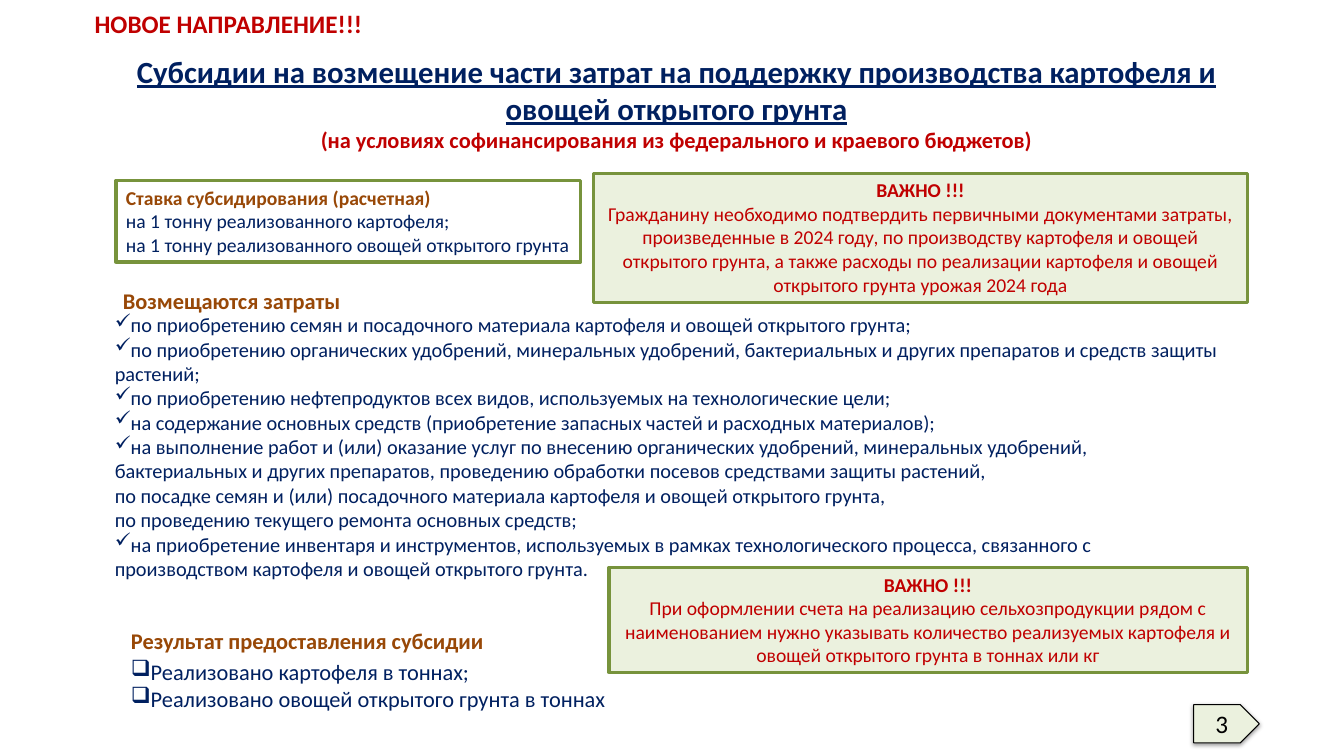
from lxml.etree import SubElement
from pptx import Presentation
from pptx.dml.color import RGBColor
from pptx.enum.shapes import MSO_SHAPE as Shape
from pptx.enum.text import MSO_ANCHOR as Anchor, MSO_AUTO_SIZE as AutoSize, PP_ALIGN as Align
from pptx.oxml.ns import qn
from pptx.util import Inches, Pt

NAVY = RGBColor(0x00, 0x20, 0x60)
RED = RGBColor(0xC0, 0x00, 0x00)
BROWN = RGBColor(0x98, 0x48, 0x07)
GREEN = RGBColor(0x77, 0x93, 0x3C)
PALE_GREEN = RGBColor(0xEB, 0xF1, 0xDE)
BLACK = RGBColor(0x00, 0x00, 0x00)

WIDTH, HEIGHT = Inches(13.33), Inches(7.5)

SUBSIDY = "Субсидии на возмещение части затрат на поддержку производства картофеля и овощей открытого грунта"
FUNDING = "(на условиях софинансирования из федерального и краевого бюджетов)"
RATES = ["на 1 тонну реализованного картофеля;", "на 1 тонну реализованного овощей открытого грунта"]
PROOF = ("Гражданину необходимо подтвердить первичными документами затраты, произведенные в 2024 году, "
         "по производству картофеля и овощей открытого грунта, а также расходы по реализации "
         "картофеля и овощей открытого грунта урожая 2024 года")
INVOICE = ("При оформлении счета на реализацию сельхозпродукции рядом с наименованием нужно указывать "
           "количество реализуемых картофеля и овощей открытого грунта в тоннах или кг")
COSTS = [
    "по приобретению семян и посадочного материала картофеля и овощей открытого грунта;",
    "по приобретению органических удобрений, минеральных удобрений, бактериальных и других "
    "препаратов и средств защиты растений;",
    "по приобретению нефтепродуктов всех видов, используемых на технологические цели;",
    "на содержание основных средств (приобретение запасных частей и расходных материалов);",
    "на выполнение работ и (или) оказание услуг по внесению органических удобрений, минеральных "
    "удобрений, бактериальных и других препаратов, проведению обработки посевов средствами защиты "
    "растений,\nпо посадке семян и (или) посадочного материала картофеля и овощей открытого грунта,\n"
    "по проведению текущего ремонта основных средств;",
    "на приобретение инвентаря и инструментов, используемых в рамках технологического процесса, "
    "связанного с производством картофеля и овощей открытого грунта.",
]
RESULTS = ["Реализовано картофеля в тоннах;", "Реализовано овощей открытого грунта в тоннах"]


def place(left, top, width, height):
    """Turn percent of the slide into lengths."""
    return [int(side * share / 100)
            for side, share in zip((WIDTH, HEIGHT) * 2, (left, top, width, height))]


def line(text, size, color, **look):
    """Describe one paragraph: its text and its font values."""
    return text, {"name": "Calibri", "size": Pt(size), "bold": False, **look}, color


def write(frame, lines, align=Align.LEFT, bullet=None):
    for number, (text, look, color) in enumerate(lines):
        paragraph = frame.add_paragraph() if number else frame.paragraphs[0]
        paragraph.text = text
        paragraph.alignment = align
        if bullet:
            SubElement(paragraph._p.get_or_add_pPr(), qn("a:buChar"), char=bullet)
        for run in paragraph.runs:
            for attribute, value in look.items():
                setattr(run.font, attribute, value)
            run.font.color.rgb = color
        for line_break in paragraph._p.findall(qn("a:br")):
            SubElement(line_break, qn("a:rPr"), sz=str(look["size"].centipoints))


def add_text(slide, area, lines, wrap=True, **layout):
    frame = slide.shapes.add_textbox(*place(*area)).text_frame
    frame.word_wrap = wrap
    frame.auto_size = AutoSize.SHAPE_TO_FIT_TEXT
    write(frame, lines, **layout)


def add_panel(slide, area, lines, fill=None, align=Align.LEFT, kind=Shape.RECTANGLE,
              border=GREEN, weight=2.25, anchor=Anchor.TOP):
    panel = slide.shapes.add_shape(kind, *place(*area))
    panel.shadow.inherit = False
    if fill:
        panel.fill.solid()
        panel.fill.fore_color.rgb = fill
    else:
        panel.fill.background()
    panel.line.color.rgb = border
    panel.line.width = Pt(weight)
    panel.text_frame.word_wrap = True
    panel.text_frame.vertical_anchor = anchor
    write(panel.text_frame, lines, align)
    return panel


def add_warning(slide, area, message):
    add_panel(slide, area, [line("ВАЖНО !!!", 14, RED, bold=True), line(message, 14, RED)],
              PALE_GREEN, Align.CENTER)


def add_heading(slide, area, text):
    add_text(slide, area, [line(text, 16, BROWN, bold=True)], wrap=False)


def add_page_marker(slide, area, number):
    marker = add_panel(slide, area, [line(number, 18, BLACK)], PALE_GREEN, Align.CENTER,
                       Shape.PENTAGON, BLACK, 0.75, Anchor.MIDDLE)
    # Soft shadow straight below
    effects = marker._element.spPr.find(qn("a:effectLst"))
    shadow = SubElement(effects, qn("a:outerShdw"), blurRad=str(Pt(3.1)), dist=str(Pt(1.6)),
                        dir="5400000", rotWithShape="0")
    tint = SubElement(shadow, qn("a:srgbClr"), val=str(BLACK))
    SubElement(tint, qn("a:alpha"), val="38000")


def main():
    deck = Presentation()
    deck.slide_width, deck.slide_height = WIDTH, HEIGHT
    slide = deck.slides.add_slide(deck.slide_layouts[6])

    # Title
    add_text(slide, (9, 6.27, 82.67, 15.2),
             [line(SUBSIDY, 22, NAVY, bold=True, underline=True),
              line(FUNDING, 16, RED, bold=True)], align=Align.CENTER)
    add_text(slide, (6.3, 0.4, 25.8, 5.33), [line("НОВОЕ НАПРАВЛЕНИЕ!!!", 18, RED, bold=True)])

    # Subsidy rate and proof of costs
    add_panel(slide, (8.63, 23.87, 34.58, 10.8),
              [line("Ставка субсидирования (расчетная)", 14, BROWN, bold=True)]
              + [line(rate, 14, NAVY) for rate in RATES])
    add_warning(slide, (44.19, 22.93, 48.61, 17.07), PROOF)

    # Refunded costs
    add_heading(slide, (8.4, 37.33, 17.93, 4.93), "Возмещаются затраты")
    add_text(slide, (7.8, 40.67, 83.8, 37.2), [line(cost, 14.5, NAVY) for cost in COSTS], bullet="✓")

    # Results and invoice rule
    add_heading(slide, (9, 82.27, 28.06, 4.93), "Результат предоставления субсидии")
    add_text(slide, (9, 86.4, 37.51, 8.53), [line(result, 16, NAVY) for result in RESULTS], bullet="❑")
    add_warning(slide, (45.31, 75.07, 47.49, 13.87), INVOICE)

    add_page_marker(slide, (88.82, 93.2, 4.88, 5.07), "3")
    deck.save("out.pptx")


if __name__ == "__main__":
    main()
